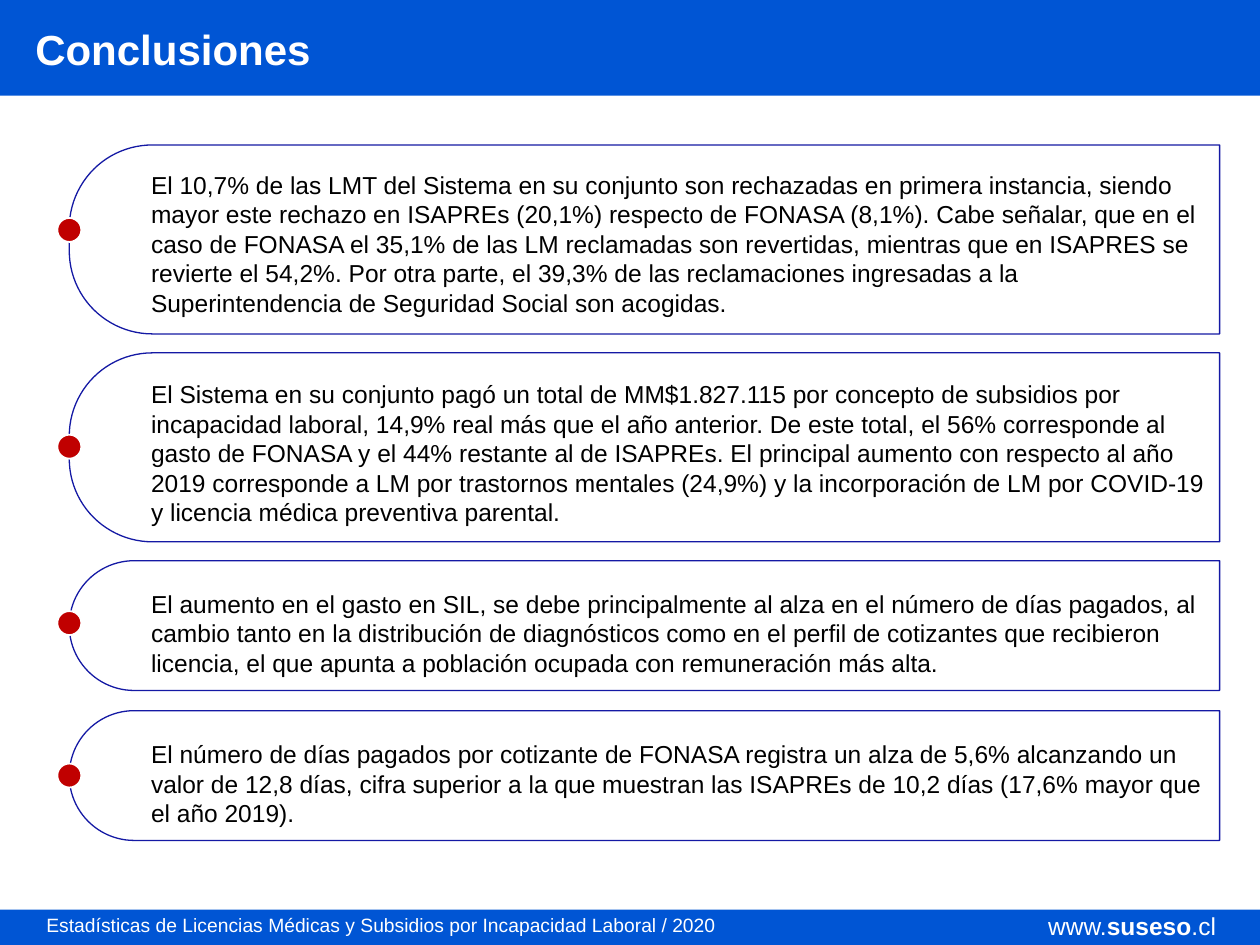
from typing import NamedTuple

from pptx import Presentation
from pptx.dml.color import RGBColor
from pptx.enum.shapes import MSO_SHAPE as Shape
from pptx.enum.text import MSO_ANCHOR as Anchor, PP_ALIGN as Align
from pptx.util import Inches, Pt

BLUE = RGBColor(0x00, 0x55, 0xD4)
NAVY = RGBColor(0x14, 0x19, 0xA4)
RED = RGBColor(0xC0, 0x00, 0x00)
WHITE = RGBColor(0xFF, 0xFF, 0xFF)
BLACK = RGBColor(0x00, 0x00, 0x00)

CARD_LEFT, CARD_WIDTH = 0.55, 9.13
DOT_SIZE = 0.19


class Conclusion(NamedTuple):
    top: float
    height: float
    rounding: float
    dot_top: float
    text: str


class Run(NamedTuple):
    text: str
    bold: bool = False


CONCLUSIONS = [
    Conclusion(1.15, 1.5, 0.44, 1.73,
               "El 10,7% de las LMT del Sistema en su conjunto son rechazadas en primera "
               "instancia, siendo mayor este rechazo en ISAPREs (20,1%) respecto de FONASA "
               "(8,1%). Cabe señalar, que en el caso de FONASA el 35,1% de las LM reclamadas "
               "son revertidas, mientras que en ISAPRES se revierte el 54,2%. Por otra parte, "
               "el 39,3% de las reclamaciones ingresadas a la Superintendencia de Seguridad "
               "Social son acogidas."),
    Conclusion(2.8, 1.5, 0.44, 3.45,
               "El Sistema en su conjunto pagó un total de MM$1.827.115 por concepto de "
               "subsidios por incapacidad laboral, 14,9% real más que el año anterior. De este "
               "total, el 56% corresponde al gasto de FONASA y el 44% restante al de ISAPREs. "
               "El principal aumento con respecto al año 2019 corresponde a LM por trastornos "
               "mentales (24,9%) y la incorporación de LM por COVID-19 y licencia médica "
               "preventiva parental."),
    Conclusion(4.45, 1.03, 0.5, 4.85,
               "El aumento en el gasto en SIL, se debe principalmente al alza en el número de "
               "días pagados, al cambio tanto en la distribución de diagnósticos como en el "
               "perfil de cotizantes que recibieron licencia, el que apunta a población ocupada "
               "con remuneración más alta."),
    Conclusion(5.64, 1.03, 0.5, 6.06,
               "El número de días pagados por cotizante de FONASA registra un alza de 5,6% "
               "alcanzando un valor de 12,8 días, cifra superior a la que muestran las ISAPREs "
               "de 10,2 días (17,6% mayor que el año 2019)."),
]


def add_figure(slide, kind, left: float, top: float, width: float, height: float,
               fill: RGBColor, line: RGBColor | None = None, line_width: float = 0.75):
    figure = slide.shapes.add_shape(kind, Inches(left), Inches(top),
                                    Inches(width), Inches(height))
    figure.shadow.inherit = False
    figure.fill.solid()
    figure.fill.fore_color.rgb = fill
    if line is None:
        figure.line.fill.background()
    else:
        figure.line.color.rgb = line
        figure.line.width = Pt(line_width)
    return figure


def add_card(slide, card: Conclusion) -> None:
    # The rounded top is turned to the left around the card's centre
    left = CARD_LEFT + (CARD_WIDTH - card.height) / 2
    top = card.top + (card.height - CARD_WIDTH) / 2
    outline = add_figure(slide, Shape.ROUND_2_SAME_RECTANGLE, left, top,
                         card.height, CARD_WIDTH, WHITE, NAVY)
    outline.rotation = 270
    outline.adjustments[0] = card.rounding
    outline.adjustments[1] = 0
    add_figure(slide, Shape.OVAL, CARD_LEFT - DOT_SIZE / 2, card.dot_top,
               DOT_SIZE, DOT_SIZE, RED, WHITE, 1)


def write(box, paragraphs: list[list[Run]], size: float, color: RGBColor,
          **formats) -> None:
    frame = box.text_frame
    frame.word_wrap = True
    frame.vertical_anchor = Anchor.TOP
    for index, runs in enumerate(paragraphs):
        paragraph = frame.paragraphs[0] if index == 0 else frame.add_paragraph()
        for name, value in formats.items():
            if index or name != "space_before":
                setattr(paragraph, name, value)
        for text, bold in runs:
            run = paragraph.add_run()
            run.text = text
            run.font.color.rgb = color
            for name, value in {"name": "Arial", "size": Pt(size), "bold": bold}.items():
                setattr(run.font, name, value)


def add_text(slide, left: float, top: float, width: float, height: float):
    return slide.shapes.add_textbox(Inches(left), Inches(top),
                                    Inches(width), Inches(height))


def main() -> None:
    deck = Presentation()
    deck.slide_width, deck.slide_height = Inches(10), Inches(7.5)
    slide = deck.slides.add_slide(deck.slide_layouts[5])

    # Header band with the title in front of it
    header = add_figure(slide, Shape.RECTANGLE, 0, 0, 10, 0.76, BLUE)
    title = slide.shapes.title
    header.element.addnext(title.element)
    title.left, title.top = Inches(0.18), Inches(0.14)
    title.width, title.height = Inches(8.45), Inches(0.59)
    write(title, [[Run("Conclusiones", True)]], 24, WHITE, alignment=Align.LEFT)

    # Conclusions, spaced so that each paragraph falls inside its card
    for card in CONCLUSIONS:
        add_card(slide, card)
    conclusions = add_text(slide, 1.1, 1.3, 8.58, 5.67)
    write(conclusions, [[Run(card.text)] for card in CONCLUSIONS], 14, BLACK,
          line_spacing=1.0, space_before=Pt(35.6))

    # Footer band
    add_figure(slide, Shape.RECTANGLE, 0, 7.22, 10, 0.28, BLUE)
    report = add_text(slide, 0.27, 7.2, 7.87, 0.29)
    write(report, [[Run("Estadísticas de Licencias Médicas y Subsidios por "
                        "Incapacidad Laboral / 2020")]], 11, WHITE)
    website = add_text(slide, 8.17, 7.18, 1.63, 0.38)
    write(website, [[Run("www."), Run("suseso", True), Run(".cl")]], 14, WHITE,
          alignment=Align.CENTER)

    deck.save("out.pptx")


if __name__ == "__main__":
    main()
